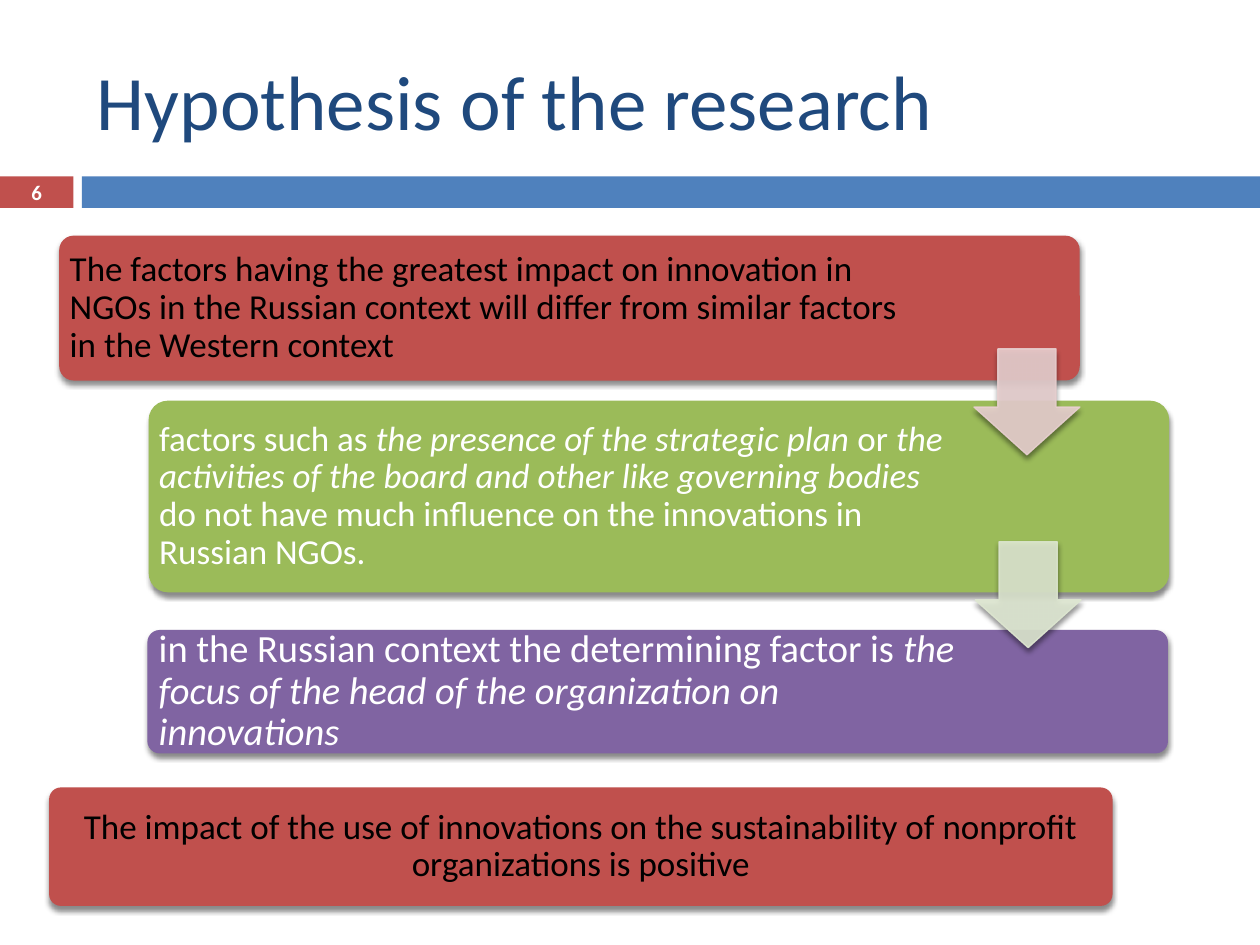
from dataclasses import dataclass

from lxml import etree
from pptx import Presentation
from pptx.dml.color import RGBColor
from pptx.enum.shapes import MSO_SHAPE
from pptx.enum.text import MSO_ANCHOR, PP_ALIGN
from pptx.oxml.ns import qn
from pptx.util import Pt

RECTANGLE = MSO_SHAPE.RECTANGLE
ROUNDED = MSO_SHAPE.ROUNDED_RECTANGLE
DOWN_ARROW = MSO_SHAPE.DOWN_ARROW
MIDDLE = MSO_ANCHOR.MIDDLE
LEFT, CENTER = PP_ALIGN.LEFT, PP_ALIGN.CENTER

FONT = "Calibri"
BLACK = RGBColor(0x00, 0x00, 0x00)
WHITE = RGBColor(0xFF, 0xFF, 0xFF)
NAVY = RGBColor(0x1F, 0x49, 0x7D)
BLUE = RGBColor(0x4F, 0x81, 0xBD)
RED = RGBColor(0xC0, 0x50, 0x4D)
GREEN = RGBColor(0x9B, 0xBB, 0x59)
PURPLE = RGBColor(0x80, 0x64, 0xA2)
PALE_RED = RGBColor(0xE8, 0xD0, 0xD0)
PALE_GREEN = RGBColor(0xDE, 0xE7, 0xD1)

CARD_WIDTH = 583.2
CORNER = 0.1
CORNER_TEXT_INSET = 0.29
ARROW_SIZE = 60.5
BAND_TOP, BAND_HEIGHT = 100.8, 18


@dataclass
class Hypothesis:
    left: float
    top: float
    width: float
    height: float
    fill: RGBColor
    color: RGBColor
    phrases: list[tuple[str, bool]]
    right_gap: float = 0
    size: float = 20
    inset: float = 6
    align: PP_ALIGN = LEFT


@dataclass
class Arrow:
    left: float
    top: float
    color: RGBColor


HYPOTHESES = [
    Hypothesis(33.84, 134.64, CARD_WIDTH, 82.8, RED, BLACK, [
        ("The factors having the greatest impact on innovation in NGOs in the "
         "Russian context will differ from similar factors in the Western context", False),
    ], right_gap=94.3),
    Hypothesis(84.96, 228.96, CARD_WIDTH, 109.5, GREEN, WHITE, [
        ("factors such as ", False),
        ("the presence of the strategic plan", True),
        (" or ", False),
        ("the activities of the board and other like governing bodies ", True),
        ("do not have much influence on the innovations in Russian NGOs.", False),
    ], right_gap=111.6),
    Hypothesis(84.24, 360, CARD_WIDTH, 70.5, PURPLE, WHITE, [
        ("in the Russian context the determining factor is ", False),
        ("the focus of the head of the organization on innovations", True),
    ], right_gap=111.6, size=22, inset=6.5),
    Hypothesis(28.08, 450, 607.7, 67.7, RED, BLACK, [
        ("The impact of the use of innovations on the sustainability of "
         "nonprofit organizations is positive", False),
    ], align=CENTER),
]

ARROWS = [Arrow(556.6, 199.4, PALE_RED), Arrow(557.3, 309.6, PALE_GREEN)]


def add_filled(slide, kind, left: float, top: float, width: float, height: float,
               fill: RGBColor):
    shape = slide.shapes.add_shape(kind, Pt(left), Pt(top), Pt(width), Pt(height))
    shape.shadow.inherit = False
    shape.fill.solid()
    shape.fill.fore_color.rgb = fill
    shape.line.fill.background()
    return shape


def add_alpha(color_element, percent: int) -> None:
    etree.SubElement(color_element, qn("a:alpha"), val=str(percent * 1000))


def cast_shadow(shape) -> None:
    effects = shape.element.spPr.find(qn("a:effectLst"))
    shadow = etree.SubElement(effects, qn("a:outerShdw"), blurRad=str(Pt(3)),
                              dist=str(Pt(2.4)), dir="5400000", rotWithShape="0")
    add_alpha(etree.SubElement(shadow, qn("a:srgbClr"), val="000000"), 45)


def set_margins(frame, left: float, top: float, right: float, bottom: float) -> None:
    frame.margin_left, frame.margin_top = Pt(left), Pt(top)
    frame.margin_right, frame.margin_bottom = Pt(right), Pt(bottom)


def style_paragraph(paragraph, size: float, color: RGBColor, align: PP_ALIGN) -> None:
    paragraph.alignment = align
    paragraph.font.name = FONT
    paragraph.font.size = Pt(size)
    paragraph.font.color.rgb = color


def add_title(slide, wording: str) -> None:
    title = slide.shapes.title
    title.left, title.top, title.width, title.height = Pt(48.2), Pt(18), Pt(642.2), Pt(77.8)
    title.text_frame.text = wording
    title.text_frame.vertical_anchor = MIDDLE
    style_paragraph(title.text_frame.paragraphs[0], 44, NAVY, LEFT)


def add_band(slide, number: str) -> None:
    number_box = add_filled(slide, RECTANGLE, 0, BAND_TOP, 42, BAND_HEIGHT, RED)
    add_filled(slide, RECTANGLE, 46.8, BAND_TOP, 673.2, BAND_HEIGHT, BLUE)
    frame = number_box.text_frame
    set_margins(frame, 0, 0, 0, 0)
    frame.vertical_anchor = MIDDLE
    frame.text = number
    style_paragraph(frame.paragraphs[0], 11.9, WHITE, CENTER)
    frame.paragraphs[0].font.bold = True


def add_hypothesis(slide, item: Hypothesis) -> None:
    card = add_filled(slide, ROUNDED, item.left, item.top, item.width, item.height, item.fill)
    card.adjustments[0] = CORNER
    cast_shadow(card)
    frame = card.text_frame
    frame.word_wrap = True
    frame.vertical_anchor = MIDDLE
    margin = item.inset - CORNER_TEXT_INSET * CORNER * item.height
    set_margins(frame, margin, margin, margin + item.right_gap, margin)
    paragraph = frame.paragraphs[0]
    style_paragraph(paragraph, item.size, item.color, item.align)
    paragraph.line_spacing = 0.9
    for wording, italic in item.phrases:
        run = paragraph.add_run()
        run.text = wording
        run.font.italic = italic


def add_arrow(slide, item: Arrow) -> None:
    arrow = add_filled(slide, DOWN_ARROW, item.left, item.top, ARROW_SIZE, ARROW_SIZE, item.color)
    arrow.adjustments[0] = 0.55
    arrow.adjustments[1] = 0.45
    arrow.line.color.rgb = item.color
    arrow.line.width = Pt(0.79)
    for color_element in arrow.element.spPr.iter(qn("a:srgbClr")):
        add_alpha(color_element, 90)
    cast_shadow(arrow)


def main() -> None:
    deck = Presentation()
    deck.slide_width, deck.slide_height = Pt(720), Pt(540)
    slide = deck.slides.add_slide(deck.slide_layouts.get_by_name("Title Only"))
    add_title(slide, "Hypothesis of the research")
    add_band(slide, "6")
    for hypothesis in HYPOTHESES:
        add_hypothesis(slide, hypothesis)
    for arrow in ARROWS:
        add_arrow(slide, arrow)
    deck.save("out.pptx")


if __name__ == "__main__":
    main()
